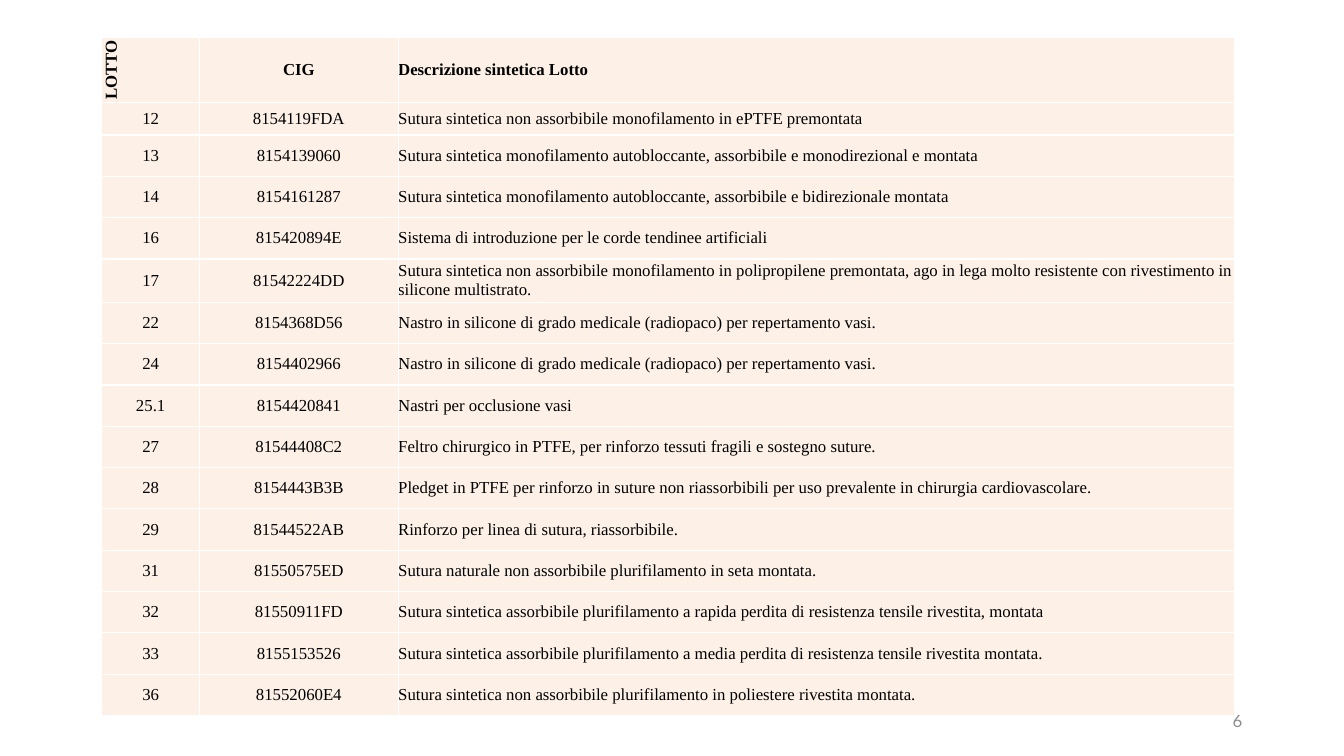
"""Build a slide listing surgical suture lots with their CIG codes."""
from lxml.etree import SubElement
from pptx import Presentation
from pptx.dml.color import RGBColor
from pptx.enum.text import MSO_ANCHOR, PP_ALIGN
from pptx.oxml.ns import qn
from pptx.util import Inches, Pt

COLORS = {"cell": "FDF1E7", "border": "FFFFFF", "text": "000000", "page": "8C8C8C"}
COLUMN_WIDTHS = [0.97, 1.97, 8.3]
ALIGNMENTS = [PP_ALIGN.CENTER, PP_ALIGN.CENTER, PP_ALIGN.LEFT]
ROW_HEIGHT = 0.41
SPECIAL_HEIGHTS = {0: 0.65, 1: 0.32, 5: 0.43}
LOTS = [
    ("LOTTO", "CIG", "Descrizione sintetica Lotto"),
    ("12", "8154119FDA", "Sutura sintetica non assorbibile monofilamento in ePTFE premontata"),
    ("13", "8154139060", "Sutura sintetica monofilamento autobloccante, assorbibile e monodirezional e montata"),
    ("14", "8154161287", "Sutura sintetica monofilamento autobloccante, assorbibile e bidirezionale montata"),
    ("16", "815420894E", "Sistema di introduzione per le corde tendinee artificiali"),
    ("17", "81542224DD", "Sutura sintetica non assorbibile monofilamento in polipropilene premontata, "
     "ago in lega molto resistente con rivestimento in silicone multistrato."),
    ("22", "8154368D56", "Nastro in silicone di grado medicale (radiopaco) per repertamento vasi."),
    ("24", "8154402966", "Nastro in silicone di grado medicale (radiopaco) per repertamento vasi."),
    ("25.1", "8154420841", "Nastri per occlusione vasi"),
    ("27", "81544408C2", "Feltro chirurgico in PTFE, per rinforzo tessuti fragili e sostegno suture."),
    ("28", "8154443B3B", "Pledget in PTFE per rinforzo in suture non riassorbibili per uso prevalente "
     "in chirurgia cardiovascolare."),
    ("29", "81544522AB", "Rinforzo per linea di sutura, riassorbibile."),
    ("31", "81550575ED", "Sutura naturale non assorbibile plurifilamento in seta montata."),
    ("32", "81550911FD", "Sutura sintetica assorbibile plurifilamento a rapida perdita di resistenza "
     "tensile rivestita, montata"),
    ("33", "8155153526", "Sutura sintetica assorbibile plurifilamento a media perdita di resistenza "
     "tensile rivestita montata."),
    ("36", "81552060E4", "Sutura sintetica non assorbibile plurifilamento in poliestere rivestita montata."),
]


def style_paragraph(paragraph, font_name, color, alignment, bold=False):
    paragraph.alignment = alignment
    paragraph.font.name = font_name
    paragraph.font.size = Pt(12)
    paragraph.font.bold = bold
    paragraph.font.color.rgb = RGBColor.from_string(COLORS[color])


def add_borders(cell):
    properties = cell._tc.get_or_add_tcPr()
    for side in ("lnL", "lnR", "lnT", "lnB"):
        border = SubElement(properties, qn(f"a:{side}"), w=str(Pt(1)))
        SubElement(SubElement(border, qn("a:solidFill")), qn("a:srgbClr"), val=COLORS["border"])


presentation = Presentation()
presentation.slide_width = Inches(13.33)
presentation.slide_height = Inches(7.5)
slide = presentation.slides.add_slide(presentation.slide_layouts[6])

page_number = slide.shapes.add_textbox(Inches(9.42), Inches(6.95), Inches(3), Inches(0.4)).text_frame
page_number.word_wrap = True
page_number.vertical_anchor = MSO_ANCHOR.MIDDLE
page_number.text = "6"
style_paragraph(page_number.paragraphs[0], "Lato", "page", PP_ALIGN.RIGHT)

row_heights = [SPECIAL_HEIGHTS.get(index, ROW_HEIGHT) for index in range(len(LOTS))]
lot_table = slide.shapes.add_table(
    len(LOTS), len(COLUMN_WIDTHS), Inches(1.01), Inches(0.37),
    Inches(sum(COLUMN_WIDTHS)), Inches(sum(row_heights))).table
lot_table.horz_banding = False
for column, width in zip(lot_table.columns, COLUMN_WIDTHS):
    column.width = Inches(width)

for row_index, (row, height, lot) in enumerate(zip(lot_table.rows, row_heights, LOTS)):
    row.height = Inches(height)
    for cell, wording, alignment in zip(row.cells, lot, ALIGNMENTS):
        cell.text = wording
        cell.margin_left = cell.margin_right = cell.margin_top = cell.margin_bottom = 0
        cell.vertical_anchor = MSO_ANCHOR.MIDDLE
        style_paragraph(cell.text_frame.paragraphs[0], "Times New Roman", "text",
                        alignment, bold=row_index == 0)
        add_borders(cell)
        cell.fill.solid()
        cell.fill.fore_color.rgb = RGBColor.from_string(COLORS["cell"])

lot_table.cell(0, 0)._tc.get_or_add_tcPr().set("vert", "vert270")

presentation.save("out.pptx")
